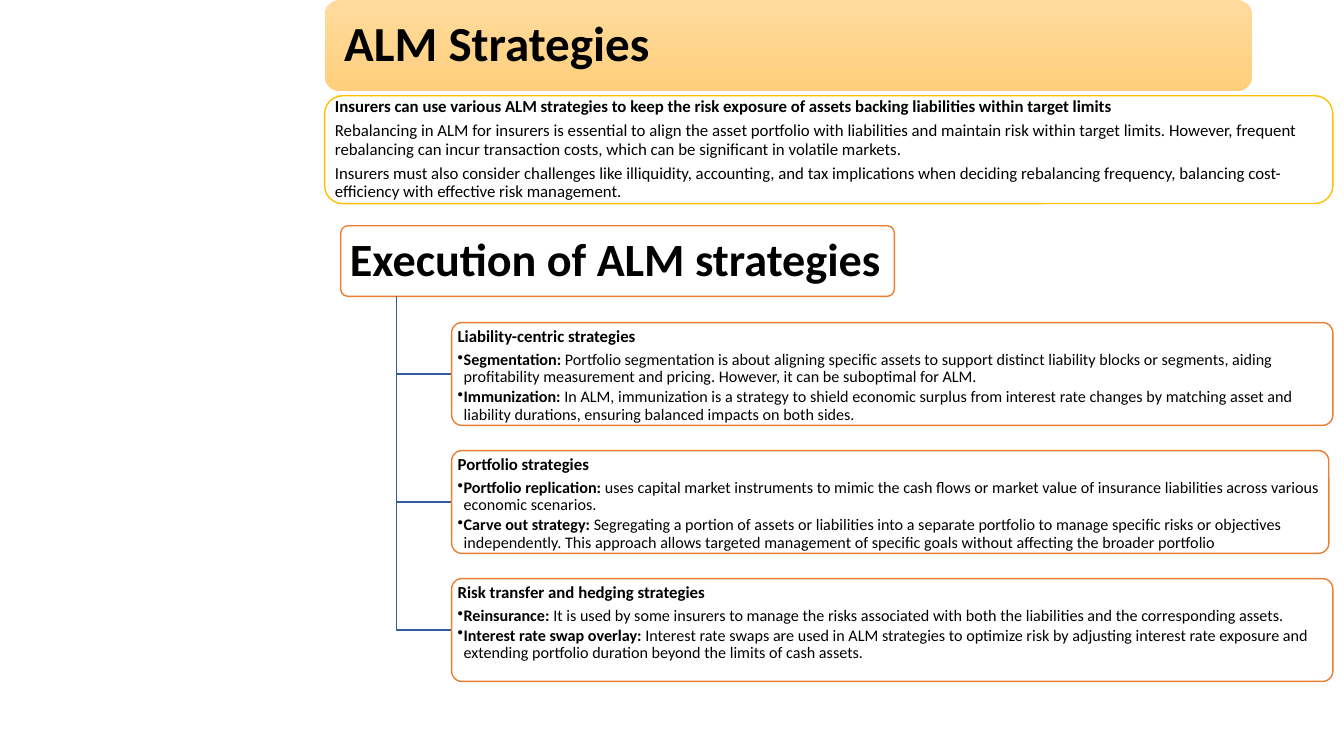
from lxml import etree
from pptx import Presentation
from pptx.dml.color import RGBColor
from pptx.enum.shapes import MSO_SHAPE
from pptx.enum.text import MSO_ANCHOR, PP_ALIGN
from pptx.oxml.ns import qn
from pptx.util import Inches, Pt

ROUND = MSO_SHAPE.ROUNDED_RECTANGLE
MIDDLE, TOP = MSO_ANCHOR.MIDDLE, MSO_ANCHOR.TOP
LEFT = PP_ALIGN.LEFT
COLORS = {
    "text": "000000", "white": "FFFFFF", "gold": "FFC000", "orange": "ED7D31",
    "trunk": "365B9D", "title_top": "FFDB9E", "title_bottom": "FFD07C",
}
INTRO = [
    "Insurers can use various ALM strategies to keep the risk exposure of assets backing liabilities within target limits",
    "Rebalancing in ALM for insurers is essential to align the asset portfolio with liabilities and maintain risk within target limits. However, frequent rebalancing can incur transaction costs, which can be significant in volatile markets.",
    "Insurers must also consider challenges like illiquidity, accounting, and tax implications when deciding rebalancing frequency, balancing cost-efficiency with effective risk management.",
]
STRATEGIES = [
    ("Liability-centric strategies", 8.74, [
        ("Segmentation: ", "Portfolio segmentation is about aligning specific assets to support distinct liability blocks or segments, aiding profitability measurement and pricing. However, it can be suboptimal for ALM."),
        ("Immunization: ", "In ALM, immunization is a strategy to shield economic surplus from interest rate changes by matching asset and liability durations, ensuring balanced impacts on both sides."),
    ]),
    ("Portfolio strategies", 8.7, [
        ("Portfolio replication: ", "uses capital market instruments to mimic the cash flows or market value of insurance liabilities across various economic scenarios."),
        ("Carve out strategy: ", "Segregating a portion of assets or liabilities into a separate portfolio to manage specific risks or objectives independently. This approach allows targeted management of specific goals without affecting the broader portfolio"),
    ]),
    ("Risk transfer and hedging strategies", 8.74, [
        ("Reinsurance: ", "It is used by some insurers to manage the risks associated with both the liabilities and the corresponding assets."),
        ("Interest rate swap overlay: ", "Interest rate swaps are used in ALM strategies to optimize risk by adjusting interest rate exposure and extending portfolio duration beyond the limits of cash assets."),
    ]),
]


def color(name):
    """Return the named colour."""
    return RGBColor.from_string(COLORS[name])


def add_card(s, x, y, w, h, line, inset_x, inset_y, anchor=MIDDLE, radius=None):
    """Add a white rounded card with an optional outline."""
    sp = s.shapes.add_shape(ROUND, Inches(x), Inches(y), Inches(w), Inches(h))
    sp.shadow.inherit = False
    if radius is not None:
        sp.adjustments[0] = radius
    sp.fill.solid()
    sp.fill.fore_color.rgb = color("white")
    if line:
        sp.line.color.rgb = color(line)
        sp.line.width = Pt(1)
    else:
        sp.line.fill.background()
    tf = sp.text_frame
    tf.word_wrap = True
    tf.vertical_anchor = anchor
    tf.margin_left = tf.margin_right = Inches(inset_x)
    tf.margin_top = tf.margin_bottom = Inches(inset_y)
    return sp


def add_paragraph(tf, runs, size, first=False, bullet=False):
    """Write one paragraph from (text, bold) runs."""
    p = tf.paragraphs[0] if first else tf.add_paragraph()
    p.alignment = LEFT
    p.line_spacing = 0.9
    p.space_after = Pt(round(size * (0.15 if bullet else 0.35), 1))
    if bullet:
        p.level = 1
        pPr = p._p.get_or_add_pPr()
        pPr.set("marL", str(Inches(0.06)))
        pPr.set("indent", str(-Inches(0.06)))
        etree.SubElement(pPr, qn("a:buChar")).set("char", "•")
    for text, bold in runs:
        r = p.add_run()
        r.text = text
        r.font.name = "Calibri"
        r.font.size = Pt(size)
        r.font.bold = bold
        r.font.color.rgb = color("text")


def add_title(s, x, y, w, h):
    """Add the gradient title banner."""
    sp = add_card(s, x, y, w, h, None, 0.15, 0.15)
    sp.fill.gradient()
    sp.fill.gradient_angle = 270
    for stop, name in zip(sp.fill.gradient_stops, ("title_top", "title_bottom")):
        stop.color.rgb = color(name)
    add_paragraph(sp.text_frame, [("ALM Strategies", True)], 35, first=True)


def add_intro(s, x, y, w, h):
    """Add the introduction card, its first paragraph in bold."""
    tf = add_card(s, x, y, w, h, "gold", 0.05, 0.05).text_frame
    for i, text in enumerate(INTRO):
        add_paragraph(tf, [(text, i == 0)], 12, first=i == 0)


def add_branch(s, x, y, end_x, end_y):
    """Draw a line down from the heading and across to a strategy card."""
    builder = s.shapes.build_freeform(Inches(x), Inches(y))
    builder.add_line_segments(
        [(Inches(x), Inches(end_y)), (Inches(end_x), Inches(end_y))], close=False)
    sp = builder.convert_to_shape()
    sp.shadow.inherit = False
    sp.fill.background()
    sp.line.color.rgb = color("trunk")
    sp.line.width = Pt(1)


def add_strategy(s, x, y, w, h, heading, items):
    """Add a strategy card with a heading and bullets."""
    tf = add_card(s, x, y, w, h, "orange", 0.03, 0.02, TOP, 0.1).text_frame
    add_paragraph(tf, [(heading, True)], 12, first=True)
    for term, text in items:
        add_paragraph(tf, [(term, True), (text, False)], 11.5, bullet=True)


def add_tree(s, x, y, w, h):
    """Add the heading card and the strategies that hang from it."""
    sp = add_card(s, x, y, w, h, "orange", 0.07, 0.05, radius=0.1)
    add_paragraph(sp.text_frame, [("Execution of ALM strategies", True)], 33, first=True)
    card_x, card_h, pitch = x + 1.1, 1.02, 1.27
    for i, (heading, card_w, items) in enumerate(STRATEGIES):
        card_y = y + 0.96 + i * pitch
        add_branch(s, x + 0.55, y + h, card_x, card_y + card_h / 2)
        add_strategy(s, card_x, card_y, card_w, card_h, heading, items)


def main():
    """Build the slide and save it."""
    prs = Presentation()
    prs.slide_width, prs.slide_height = Inches(13.33), Inches(7.5)
    s = prs.slides.add_slide(prs.slide_layouts[6])
    add_title(s, 3.22, 0, 9.2, 0.9)
    add_intro(s, 3.22, 0.95, 10, 1.07)
    add_tree(s, 3.38, 2.24, 5.49, 0.7)
    prs.save("out.pptx")


if __name__ == "__main__":
    main()
